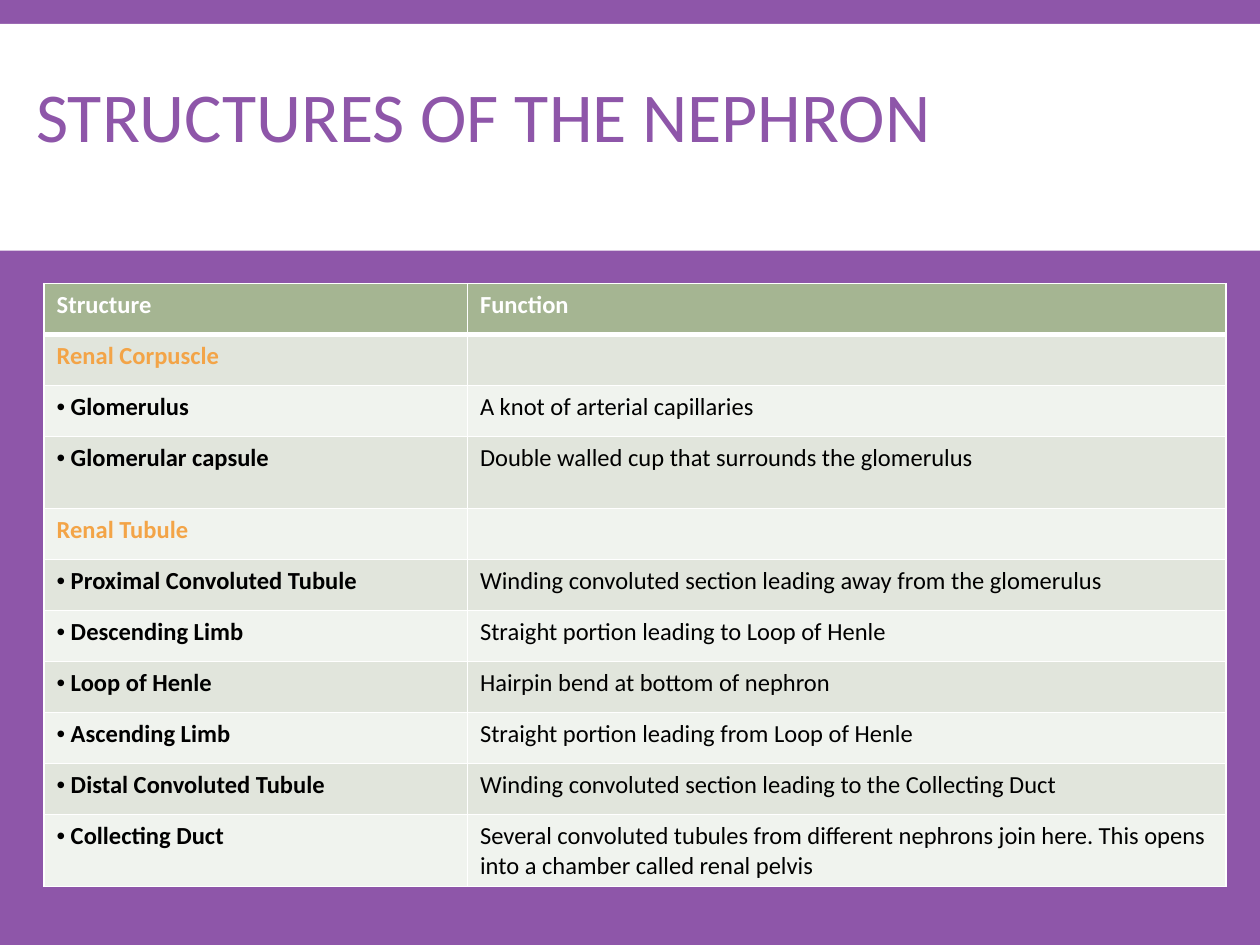
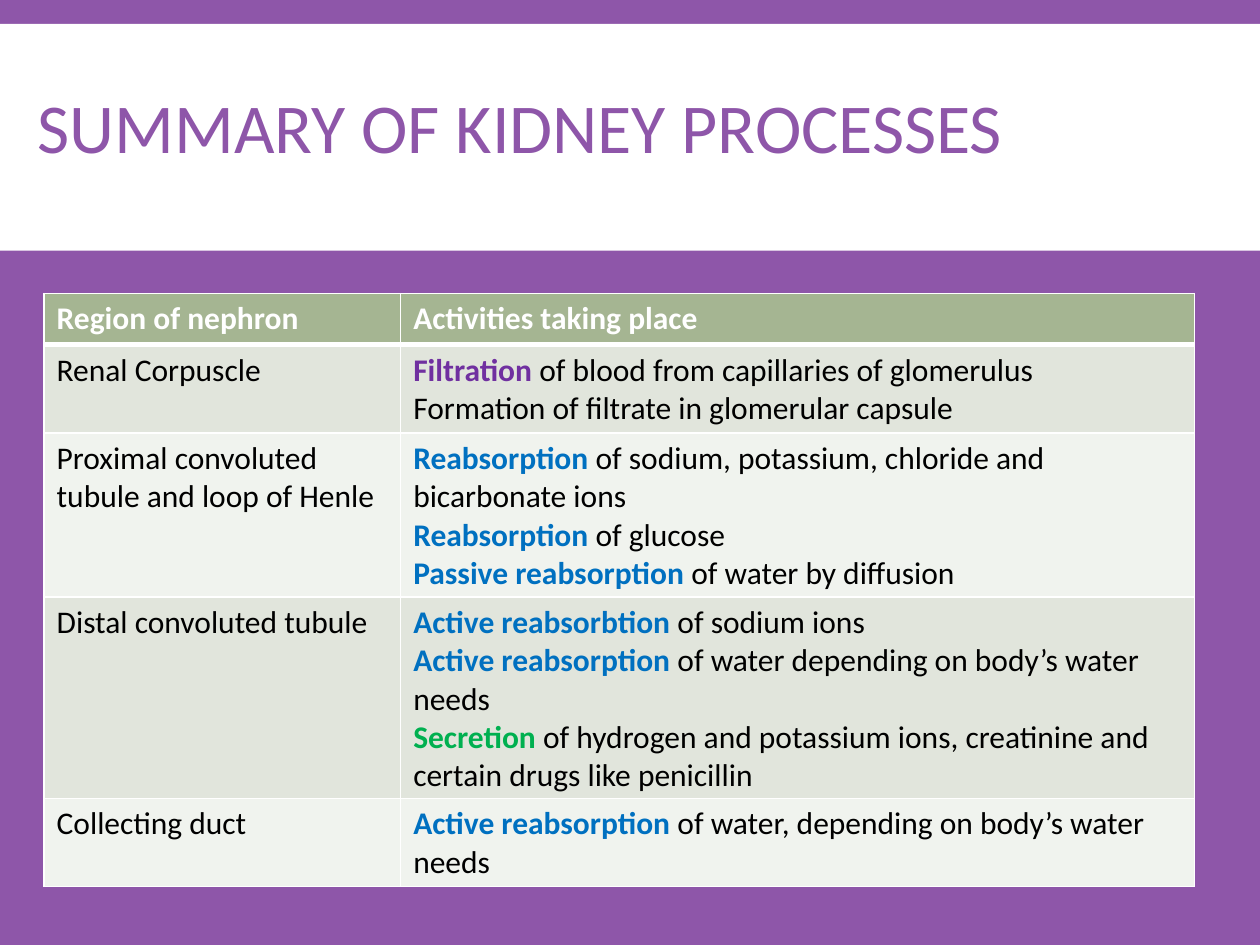
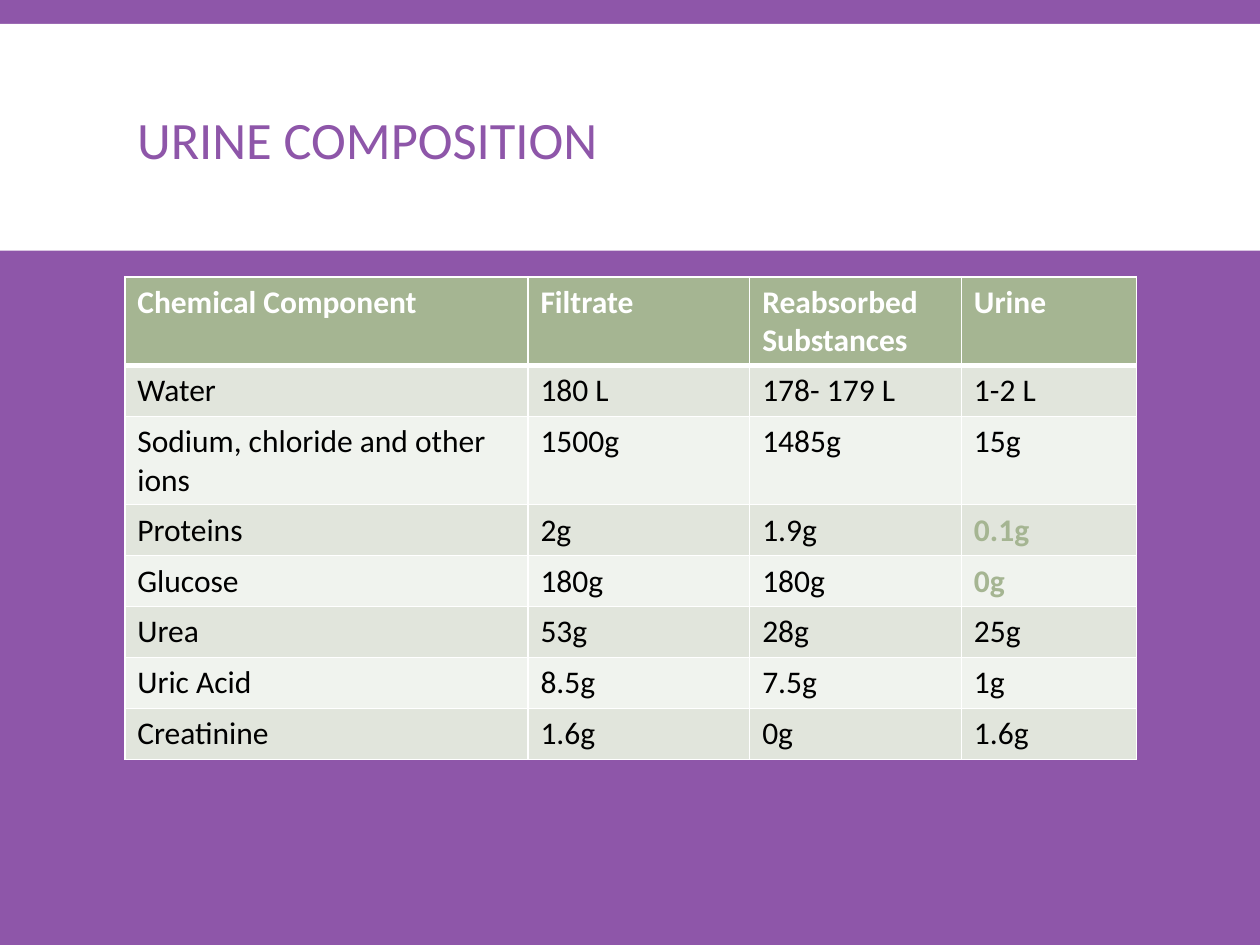
from lxml import etree
from pptx import Presentation
from pptx import util as u
from pptx.dml.color import RGBColor
from pptx.enum import shapes, text
from pptx.oxml.ns import qn

FONT = "Calibri"
PURPLE = "8E56A9"
WHITE = "FFFFFF"
BLACK = "000000"
GREEN = "A5B592"
ORANGE = "F3A447"
VIOLET = "7030A0"
BLUE = "0070C0"
EMERALD = "00B050"
BAND_FILLS = ("F0F3EE", "E1E5DC")

STRUCTURES = [
    ("Renal Corpuscle", ""),
    ("Glomerulus", "A knot of arterial capillaries"),
    ("Glomerular capsule", "Double walled cup that surrounds the glomerulus"),
    ("Renal Tubule", ""),
    ("Proximal Convoluted Tubule", "Winding convoluted section leading away from the glomerulus"),
    ("Descending Limb", "Straight portion leading to Loop of Henle"),
    ("Loop of Henle", "Hairpin bend at bottom of nephron"),
    ("Ascending Limb", "Straight portion leading from Loop of Henle"),
    ("Distal Convoluted Tubule", "Winding convoluted section leading to the Collecting Duct"),
    ("Collecting Duct", "Several convoluted tubules from different nephrons join here. "
                        "This opens into a chamber called renal pelvis"),
]

PROCESSES = [
    ("Renal Corpuscle", [
        ("Filtration", VIOLET, " of blood from capillaries of glomerulus"),
        ("", BLACK, "Formation of filtrate in glomerular capsule")]),
    ("Proximal convoluted tubule and loop of Henle", [
        ("Reabsorption ", BLUE, "of sodium, potassium, chloride and bicarbonate ions"),
        ("Reabsorption ", BLUE, "of glucose"),
        ("Passive reabsorption ", BLUE, "of water by diffusion")]),
    ("Distal convoluted tubule", [
        ("Active reabsorbtion ", BLUE, "of sodium ions"),
        ("Active reabsorption ", BLUE, "of water depending on body’s water needs"),
        ("Secretion ", EMERALD, "of hydrogen and potassium ions, creatinine and "
                                "certain drugs like penicillin")]),
    ("Collecting duct", [
        ("Active reabsorption ", BLUE, "of water, depending on body’s water needs")]),
]

COMPOSITION = [
    ("Water", "180 L", "178- 179 L", "1-2 L"),
    ("Sodium, chloride and other ions", "1500g", "1485g", "15g"),
    ("Proteins", "2g", "1.9g", "0.1g"),
    ("Glucose", "180g", "180g", "0g"),
    ("Urea", "53g", "28g", "25g"),
    ("Uric Acid", "8.5g", "7.5g", "1g"),
    ("Creatinine", "1.6g", "0g", "1.6g"),
]
TRACE_AMOUNTS = {("Proteins", "0.1g"), ("Glucose", "0g")}


def color(value):
    return RGBColor.from_string(value)


def add_span(para, words, size, hue=BLACK, bold=False):
    span = para.add_run()
    span.text = words
    span.font.name = FONT
    span.font.size = u.Pt(size)
    span.font.bold = bold
    span.font.color.rgb = color(hue)


def add_bullet(para):
    properties = para._p.get_or_add_pPr()
    properties.set("marL", "0")
    properties.set("indent", "0")
    etree.SubElement(properties, qn("a:buFont"), typeface="Arial")
    etree.SubElement(properties, qn("a:buChar"), char="•")


def add_page(deck, title, left, top, width, height, size=40):
    page = deck.slides.add_slide(deck.slide_layouts[6])
    page.background.fill.solid()
    page.background.fill.fore_color.rgb = color(PURPLE)

    band = page.shapes.add_shape(shapes.MSO_SHAPE.RECTANGLE, 0, u.Inches(0.19),
                                 deck.slide_width, u.Inches(1.8))
    band.shadow.inherit = False
    band.fill.solid()
    band.fill.fore_color.rgb = color(WHITE)
    band.line.fill.background()

    box = page.shapes.add_textbox(*map(u.Inches, (left, top, width, height)))
    box.text_frame.word_wrap = True
    box.text_frame.vertical_anchor = text.MSO_ANCHOR.MIDDLE
    para = box.text_frame.paragraphs[0]
    para.line_spacing = 0.85
    add_span(para, title, size, PURPLE)
    return page


def add_border(cell, side, points):
    line = etree.SubElement(cell._tc.get_or_add_tcPr(), qn(f"a:ln{side}"), w=str(u.Pt(points)))
    fill = etree.SubElement(line, qn("a:solidFill"))
    etree.SubElement(fill, qn("a:srgbClr"), val=WHITE)


def style_cell(cell, row):
    for side in "LRTB":
        under_header = (row, side) in ((0, "B"), (1, "T"))
        add_border(cell, side, 3 if under_header else 1)
    cell.fill.solid()
    cell.fill.fore_color.rgb = color(BAND_FILLS[row % 2] if row else GREEN)


def add_grid(page, left, top, widths, height, headings, body_count, size):
    frame = page.shapes.add_table(body_count + 1, len(widths), u.Inches(left), u.Inches(top),
                                  u.Inches(sum(widths)), u.Inches(height))
    table = frame.table
    table.horz_banding = False
    for column, width in zip(table.columns, widths):
        column.width = u.Inches(width)
    for row in range(body_count + 1):
        for cell in table.rows[row].cells:
            style_cell(cell, row)
    for cell, heading in zip(table.rows[0].cells, headings):
        add_span(first_para(cell), heading, size, WHITE, True)
    return table


def first_para(cell):
    return cell.text_frame.paragraphs[0]


def add_structures(deck):
    page = add_page(deck, "STRUCTURES OF THE NEPHRON", 0.19, 0.6, 9.7, 0.72)
    table = add_grid(page, 0.35, 2.25, (3.36, 6.02), 4.46, ("Structure", "Function"),
                     len(STRUCTURES), 14)
    for row, (structure, function) in enumerate(STRUCTURES, 1):
        para = first_para(table.cell(row, 0))
        if function:
            add_bullet(para)
            add_span(para, " " + structure, 14, bold=True)
            add_span(first_para(table.cell(row, 1)), function, 14)
        else:
            add_span(para, structure, 14, ORANGE, True)
        if structure in ("Glomerular capsule", "Collecting Duct"):
            table.rows[row].height = u.Inches(0.57)


def add_processes(deck):
    page = add_page(deck, "SUMMARY OF KIDNEY PROCESSES", 0.2, 0.76, 8.99, 0.57)
    table = add_grid(page, 0.35, 2.33, (2.83, 6.3), 2.03,
                     ("Region of nephron", "Activities taking place"), len(PROCESSES), 18)
    for row, (region, activities) in enumerate(PROCESSES, 1):
        add_span(first_para(table.cell(row, 0)), region, 18)
        frame = table.cell(row, 1).text_frame
        for index, (process, hue, detail) in enumerate(activities):
            para = frame.add_paragraph() if index else frame.paragraphs[0]
            if process:
                add_span(para, process, 18, hue, True)
            add_span(para, detail, 18)


def add_composition(deck):
    page = add_page(deck, "URINE COMPOSITION", 0.99, 0.31, 8.03, 1.65, 30)
    headings = ("Chemical Component", "Filtrate", "Reabsorbed Substances", "Urine")
    table = add_grid(page, 0.99, 2.2, (3.2, 1.76, 1.68, 1.39), 3.24, headings,
                     len(COMPOSITION), 18)
    for row, amounts in enumerate(COMPOSITION, 1):
        for column, amount in enumerate(amounts):
            trace = (amounts[0], amount) in TRACE_AMOUNTS
            add_span(first_para(table.cell(row, column)), amount, 18,
                     GREEN if trace else BLACK, trace)


def main():
    deck = Presentation()
    deck.slide_width = u.Inches(10)
    deck.slide_height = u.Inches(7.5)
    add_structures(deck)
    add_processes(deck)
    add_composition(deck)
    deck.save("out.pptx")


if __name__ == "__main__":
    main()
